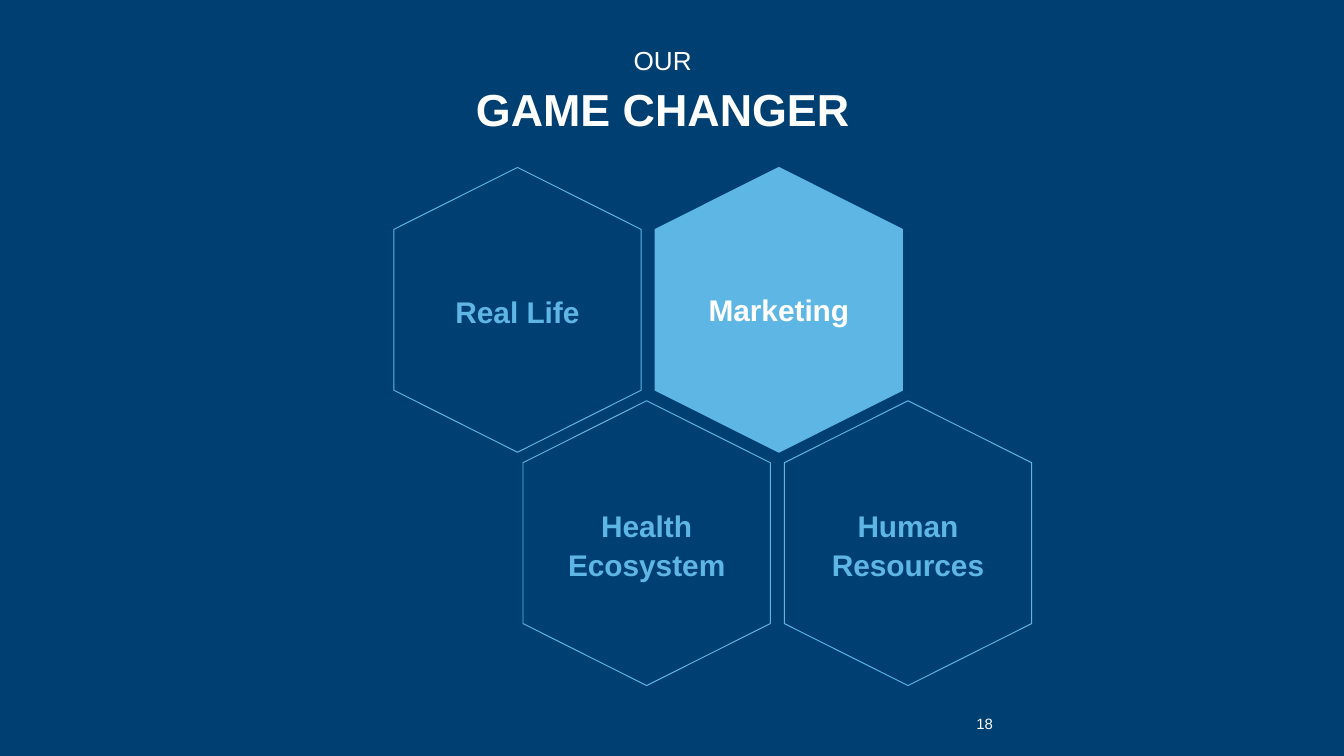
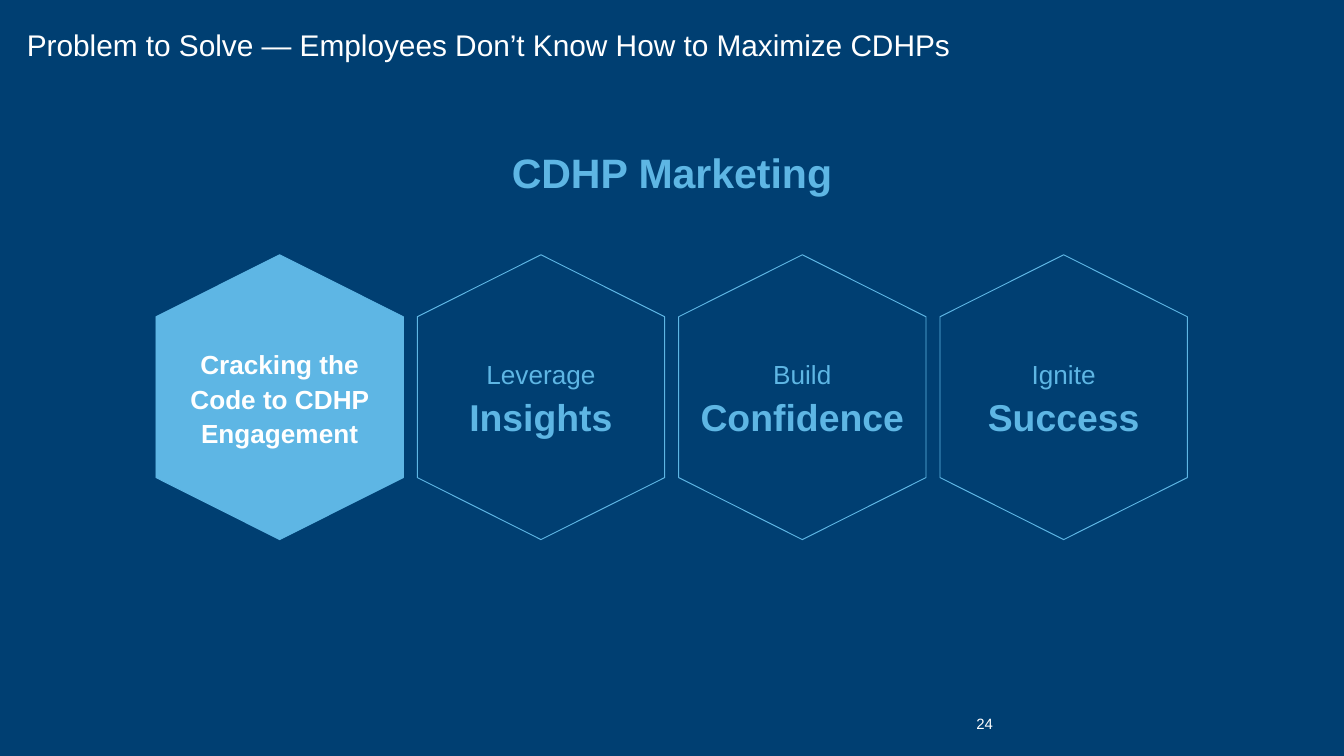
from pptx import Presentation
from pptx.dml.color import RGBColor
from pptx.enum.text import MSO_ANCHOR as ANCHOR, PP_ALIGN as ALIGN
from pptx.util import Pt

NAVY = RGBColor(0x00, 0x3F, 0x72)
SKY = RGBColor(0x5E, 0xB6, 0xE4)
WHITE = RGBColor(0xFF, 0xFF, 0xFF)
FONT = "Arial"

HEX_W, HEX_H, SHOULDER = 132.5, 152.6, 33.2
STEP_X, STEP_Y, STAGGER = 140, 125, 69.2

GAME_TITLE = [[("OUR", 14, False)], [("GAME CHANGER", 24, True)]]
GAME_CHANGERS = [
    (1, 0, [("Marketing", 16, True)], True),
    (1, 1, [("Human Resources", 16, True)], False),
    (0, 1, [("Health Ecosystem", 16, True)], False),
    (0, 0, [("Real Life", 16, True)], False),
]
PROBLEM_TITLE = "Problem to Solve ― Employees Don’t Know How to Maximize CDHPs"
PROBLEM_HEADING = "CDHP Marketing"
CDHP_STEPS = [
    (3, 0, [("Ignite\v", 14, False), ("Success", 20, True)], False),
    (2, 0, [("Build ", 14, False), ("Confidence", 20, True)], False),
    (1, 0, [("Leverage ", 14, False), ("Insights", 20, True)], False),
    (0, 0, [("Cracking the Code to CDHP Engagement", 14, True)], True),
]


def write(tf, paragraphs, color, align=ALIGN.CENTER, spacing=None, after=None,
          anchor=ANCHOR.TOP, insets=(0, 0, 0, 0)):
    tf.word_wrap = True
    tf.vertical_anchor = anchor
    tf.margin_left, tf.margin_top, tf.margin_right, tf.margin_bottom = map(Pt, insets)
    for i, runs in enumerate(paragraphs):
        p = tf.add_paragraph() if i else tf.paragraphs[0]
        p.alignment = align
        if spacing:
            p.line_spacing = spacing
        for text, size, bold in runs:
            r = p.add_run()
            r.text = text.rstrip("\v")
            r.font.name, r.font.size, r.font.bold = FONT, Pt(size), bold
            r.font.color.rgb = color
            if text.endswith("\v"):
                p.add_line_break()
    if after:
        p.space_after = Pt(after)


def add_text(s, box, paragraphs, color=WHITE, **style):
    sp = s.shapes.add_textbox(*map(Pt, box))
    write(sp.text_frame, paragraphs, color, **style)


def add_hexagon(s, x, y, label, active):
    mid, right = x + HEX_W / 2, x + HEX_W
    upper, lower, bottom = y + SHOULDER, y + HEX_H - SHOULDER, y + HEX_H
    fb = s.shapes.build_freeform(Pt(mid), Pt(y))
    corners = [(right, upper), (right, lower), (mid, bottom), (x, lower), (x, upper)]
    fb.add_line_segments([(Pt(a), Pt(b)) for a, b in corners], close=True)
    sp = fb.convert_to_shape()
    sp.shadow.inherit = False
    sp.line.color.rgb = SKY
    sp.line.width = Pt(0.5)
    if active:
        sp.fill.solid()
        sp.fill.fore_color.rgb = SKY
    else:
        sp.fill.background()
    return sp


def add_honeycomb(s, left, top, cells, active_style):
    plain_style = dict(spacing=1.1, insets=(7.2,) * 4)
    for col, row, label, active in cells:
        sp = add_hexagon(s, left + col * STEP_X + row * STAGGER,
                         top + row * STEP_Y, label, active)
        style = active_style if active and active_style else plain_style
        write(sp.text_frame, [label], WHITE if active else SKY,
              anchor=ANCHOR.MIDDLE, **style)


def add_slide(prs, number):
    s = prs.slides.add_slide(prs.slide_layouts[6])
    add_text(s, (504, 383, 28, 9.4), [[(number, 8, False)]],
             align=ALIGN.RIGHT, anchor=ANCHOR.BOTTOM)
    return s


def main():
    prs = Presentation()
    prs.slide_width, prs.slide_height = Pt(720), Pt(405)
    bg = prs.slide_master.background.fill
    bg.solid()
    bg.fore_color.rgb = NAVY

    s = add_slide(prs, "18")
    add_honeycomb(s, 211, 89.7, GAME_CHANGERS, dict(after=6, insets=(14.4,) * 4))
    add_text(s, (175, 18.7, 360, 57.6), GAME_TITLE, spacing=1.1, after=12,
             insets=(7.2, 3.6, 7.2, 3.6))

    s = add_slide(prs, "24")
    add_text(s, (0, 13, 720, 31), [[(PROBLEM_TITLE, 16, False)]],
             align=ALIGN.LEFT, spacing=0.9, insets=(14.4, 3.6, 7.2, 3.6))
    add_text(s, (0, 79.2, 720, 41), [[(PROBLEM_HEADING, 22, True)]], SKY, after=12)
    add_honeycomb(s, 83.6, 136.5, CDHP_STEPS, None)

    prs.save("out.pptx")


if __name__ == "__main__":
    main()
